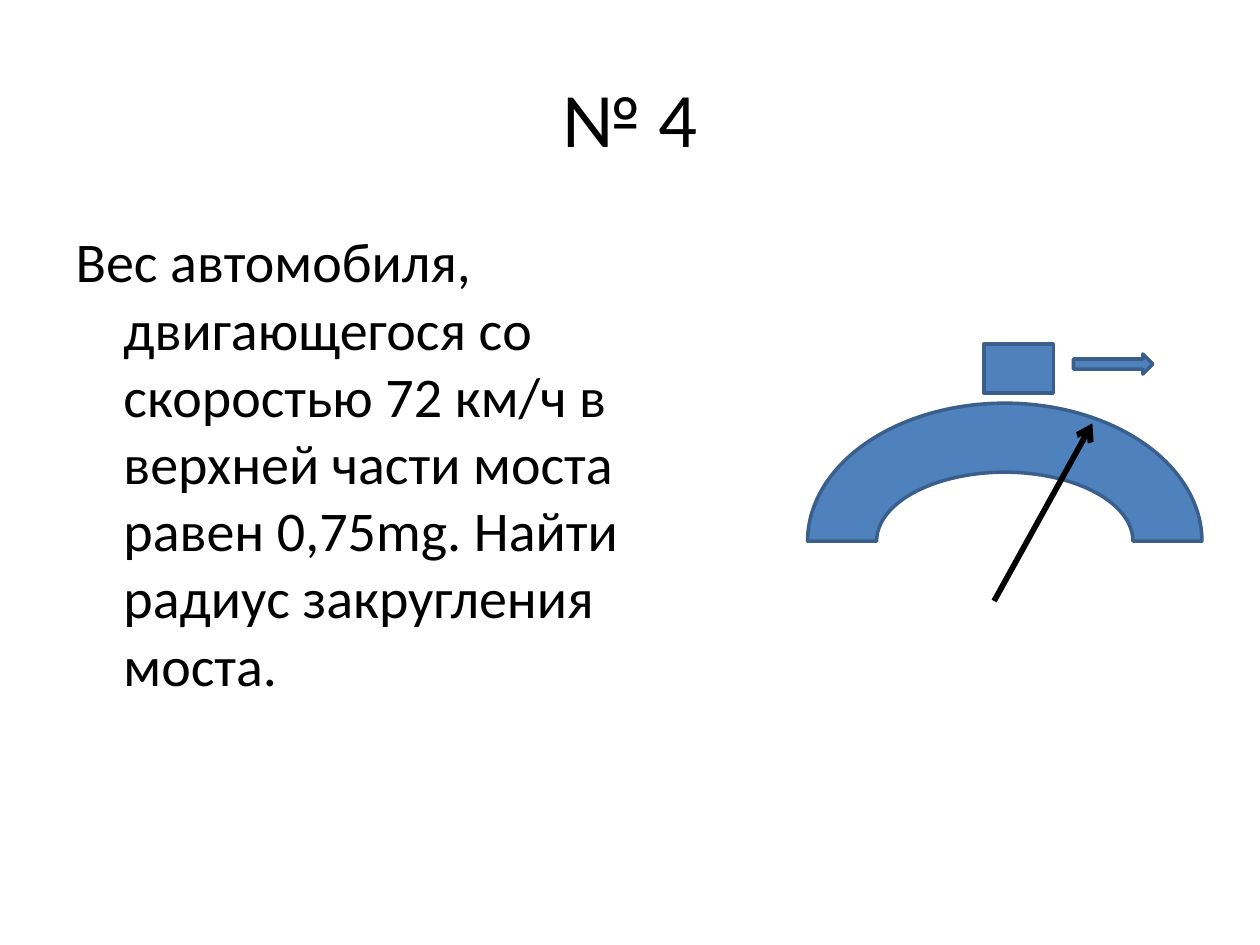
import pptx
import pptx.dml.color
import pptx.enum.shapes
import pptx.enum.text
import pptx.oxml.ns
import pptx.util
import lxml.etree

Inches = pptx.util.Inches
Pt = pptx.util.Pt
ShapeType = pptx.enum.shapes.MSO_SHAPE
qualified = pptx.oxml.ns.qn


def colour(hex_value):
    return pptx.dml.color.RGBColor.from_string(hex_value)


def place_text(placeholder, box, text, size, alignment, anchor):
    placeholder.left, placeholder.top, placeholder.width, placeholder.height = map(Inches, box)
    frame = placeholder.text_frame
    frame.word_wrap = True
    frame.vertical_anchor = anchor
    paragraph = frame.paragraphs[0]
    paragraph.alignment = alignment
    run = paragraph.add_run()
    run.text = text
    run.font.name = "Calibri"
    run.font.size = Pt(size)
    run.font.color.rgb = colour("000000")
    return paragraph


def add_title(slide, box):
    place_text(slide.shapes.title, box, "№ 4", 44,
               pptx.enum.text.PP_ALIGN.CENTER, pptx.enum.text.MSO_ANCHOR.MIDDLE)


def add_problem(slide, box):
    text = ("Вес автомобиля, двигающегося со скоростью 72 км/ч в верхней части "
            "моста равен 0,75mg. Найти радиус закругления моста.")
    paragraph = place_text(slide.placeholders[1], box, text, 32,
                           pptx.enum.text.PP_ALIGN.LEFT, pptx.enum.text.MSO_ANCHOR.TOP)
    properties = paragraph._p.get_or_add_pPr()
    properties.set("marL", str(Inches(0.38)))
    properties.set("indent", str(Inches(-0.38)))
    lxml.etree.SubElement(properties, qualified("a:buNone"))


def add_part(slide, shape_type, left, top, width, height):
    shape = slide.shapes.add_shape(shape_type, Inches(left), Inches(top),
                                   Inches(width), Inches(height))
    shape.shadow.inherit = False
    shape.fill.solid()
    shape.fill.fore_color.rgb = colour("4F81BD")
    shape.line.color.rgb = colour("3A5F8C")
    shape.line.width = Pt(2)


def add_radius(slide, start, end):
    connector = slide.shapes.add_connector(pptx.enum.shapes.MSO_CONNECTOR.STRAIGHT,
                                           *map(Inches, start + end))
    connector.line.color.rgb = colour("000000")
    connector.line.width = Pt(3.25)
    line = connector.line._get_or_add_ln()
    lxml.etree.SubElement(line, qualified("a:tailEnd"), type="arrow")
    lxml.etree.SubElement(connector._element.spPr, qualified("a:effectLst"))


def add_bridge_diagram(slide, box):
    left, top, width, height = box
    add_part(slide, ShapeType.BLOCK_ARC, left, top + 0.47, width, height - 0.47)
    add_part(slide, ShapeType.RECTANGLE, left + 1.4, top, 0.55, 0.39)
    add_part(slide, ShapeType.RIGHT_ARROW, left + 2.11, top + 0.08, 0.63, 0.16)
    add_radius(slide, (left + 1.48, top + 2.04), (left + 2.26, top + 0.63))


def main():
    presentation = pptx.Presentation()
    presentation.slide_width = Inches(10)
    presentation.slide_height = Inches(7.5)
    slide = presentation.slides.add_slide(presentation.slide_layouts[1])
    add_title(slide, (0.5, 0.3, 9, 1.25))
    add_problem(slide, (0.5, 1.75, 5.52, 4.95))
    add_bridge_diagram(slide, (6.41, 2.73, 3.13, 2.66))
    presentation.save("out.pptx")


if __name__ == "__main__":
    main()
